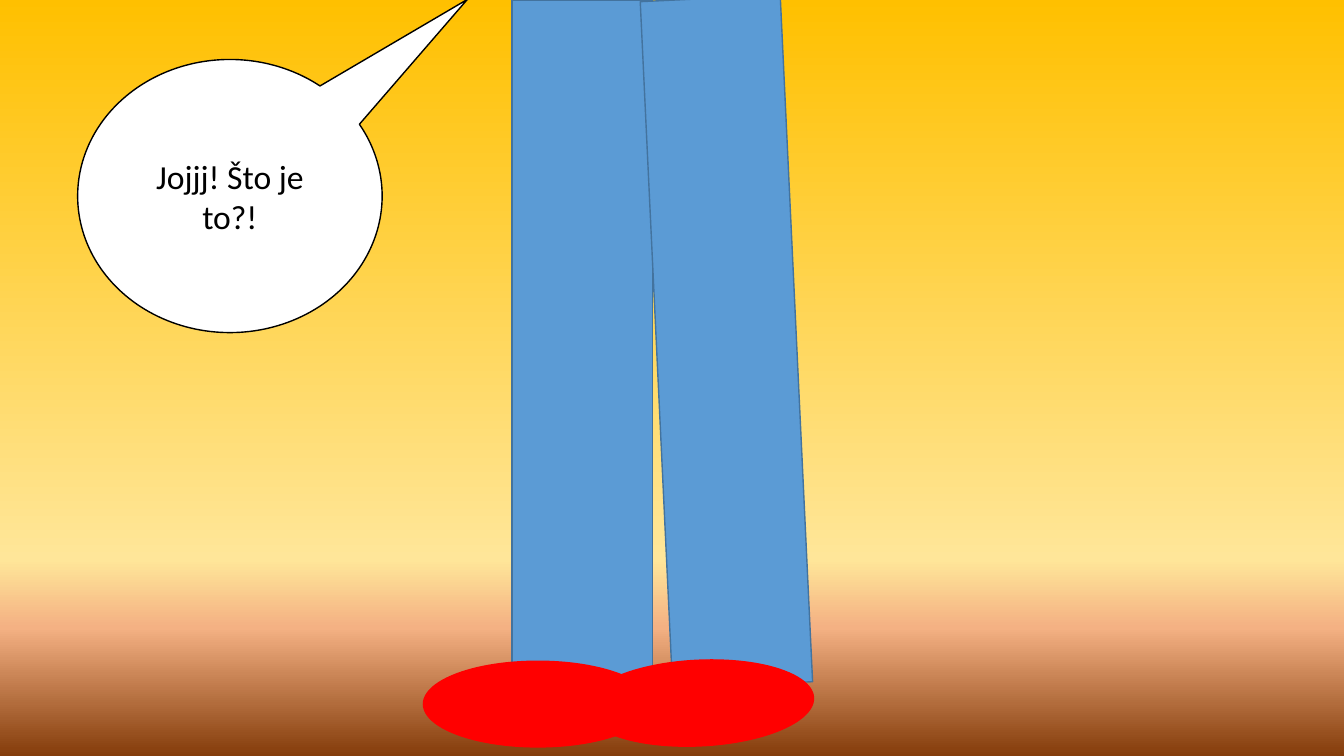
import pptx
import pptx.dml.color
import pptx.enum.shapes
import pptx.enum.text
import pptx.oxml
import pptx.oxml.ns
import pptx.util
from dataclasses import dataclass

Inches = pptx.util.Inches
Kind = pptx.enum.shapes.MSO_SHAPE


@dataclass(frozen=True)
class Theme:
    sky: tuple = ((0, "FFC000"), (74, "FFE699"), (83, "F4B183"), (100, "843C0B"))
    trousers: str = "5B9BD5"
    trousers_line: str = "43739E"
    shoe: str = "FF0000"
    bubble: str = "FFFFFF"
    ink: str = "000000"
    font: str = "Calibri"
    speech_size: int = 24
    line_width: int = 1


def color(code):
    return pptx.dml.color.RGBColor.from_string(code)


def apply(target, values):
    for name, value in values.items():
        setattr(target, name, value)


class Scene:
    def __init__(self, page, theme):
        self.page = page
        self.theme = theme

    def background(self):
        fill = self.page.background.fill
        fill.gradient()
        fill.gradient_angle = 270
        stops = self.page.element.xpath(".//p:bg//a:gsLst")[0]
        for stop in list(stops):
            stops.remove(stop)
        namespace = pptx.oxml.ns.nsdecls("a")
        for percent, code in self.theme.sky:
            stops.append(pptx.oxml.parse_xml(
                f'<a:gs {namespace} pos="{percent * 1000}">'
                f'<a:srgbClr val="{code}"/></a:gs>'))

    def shape(self, shapes, kind, bounds, fill, line, rotation=0):
        box = shapes.add_shape(kind, *map(Inches, bounds))
        box.shadow.inherit = False
        box.rotation = rotation
        box.fill.solid()
        box.fill.fore_color.rgb = color(fill)
        box.line.color.rgb = color(line)
        box.line.width = pptx.util.Pt(self.theme.line_width)
        return box

    def leg(self, trouser_at, shoe_at, rotation):
        theme = self.theme
        shapes = self.page.shapes.add_group_shape().shapes
        self.shape(shapes, Kind.RECTANGLE, (*trouser_at, 1.39, 6.82),
                   theme.trousers, theme.trousers_line, rotation)
        self.shape(shapes, Kind.OVAL, (*shoe_at, 2.27, 0.85),
                   theme.shoe, theme.shoe, rotation)

    def speech(self, text, bounds, tip):
        theme = self.theme
        bubble = self.shape(self.page.shapes, Kind.OVAL_CALLOUT, bounds,
                            theme.bubble, theme.ink)
        for index, offset in enumerate(tip):
            bubble.adjustments[index] = offset
        apply(bubble.text_frame, {
            "word_wrap": True,
            "vertical_anchor": pptx.enum.text.MSO_ANCHOR.MIDDLE,
        })
        para = bubble.text_frame.paragraphs[0]
        para.alignment = pptx.enum.text.PP_ALIGN.CENTER
        span = para.add_run()
        span.text = text
        apply(span.font, {"name": theme.font,
                          "size": pptx.util.Pt(theme.speech_size)})
        span.font.color.rgb = color(theme.ink)


def main():
    deck = pptx.Presentation()
    apply(deck, {"slide_width": Inches(13.33), "slide_height": Inches(7.5)})
    scene = Scene(deck.slides.add_slide(deck.slide_layouts[6]), Theme())
    scene.background()
    scene.leg((5.08, 0), (4.2, 6.56), 0)
    scene.leg((6.51, -0.02), (5.8, 6.55), 357.3)
    scene.speech("Jojjj! Što je to?!", (0.77, 0.59, 3.02, 2.71), (0.78, -0.72))
    deck.save("out.pptx")


if __name__ == "__main__":
    main()
